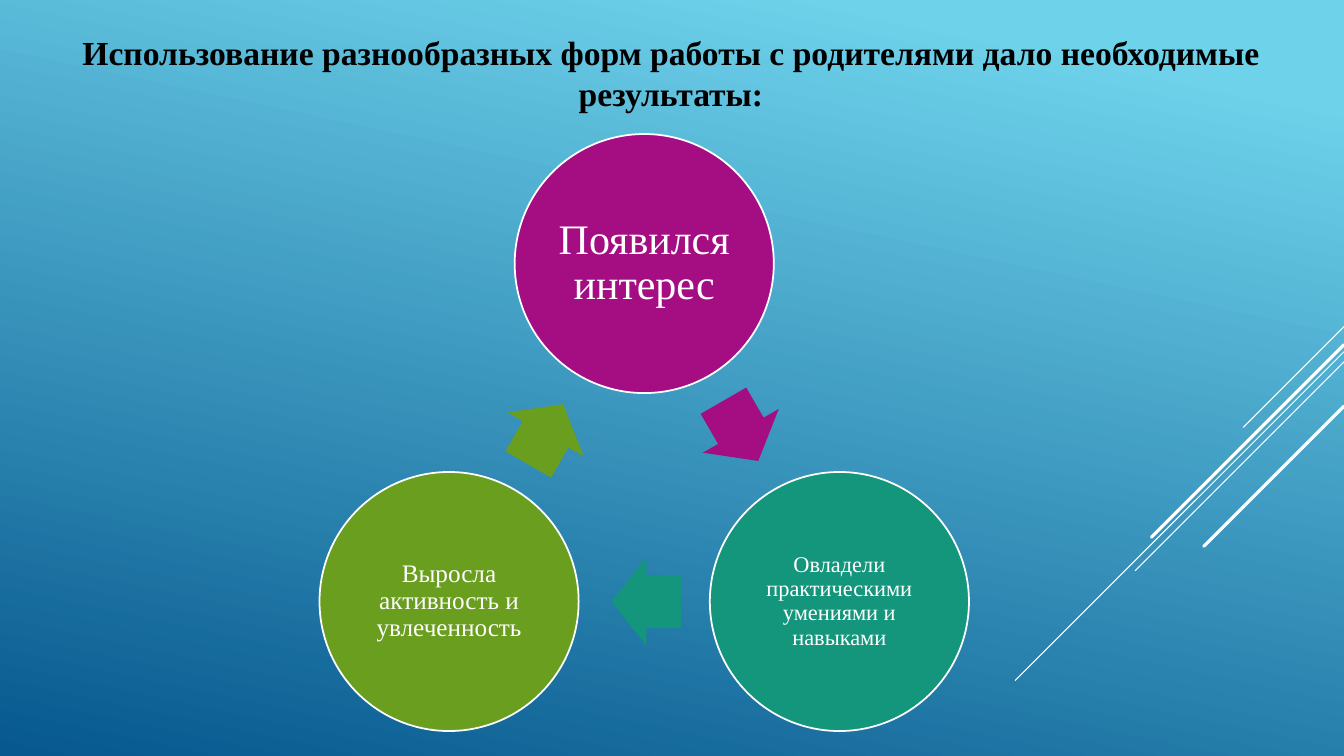
import math

from pptx import Presentation
from pptx.dml.color import RGBColor
from pptx.enum import shapes, text
from pptx.oxml.ns import qn
from pptx.util import Inches, Pt

TITLE = "Использование разнообразных форм работы с родителями дало необходимые результаты:"
FONT = "Times New Roman"
COLORS = {
    "sky": "6ED2EB", "deep": "06588E", "white": "FFFFFF", "black": "000000",
    "purple": "A50E82", "teal": "14967C", "green": "6A9E1F",
}
# label, text size, colour, inset; clockwise from the top
RESULTS = [
    ("Появился интерес", 30, "purple", 0.04),
    ("Овладели практическими умениями и навыками", 16, "teal", 0.02),
    ("Выросла активность и увлеченность", 18, "green", 0.03),
]
# top at the right edge, run of the 45° line, width
STREAKS = [(3.24, 1, 0.75), (3.49, 3.26, 0.75), (3.59, 2.07, 0.75),
           (3.42, 1.91, 2.25), (4.03, 1.39, 2.25)]

SLIDE_W, SLIDE_H = 13.33, 7.5
CENTER_X, CENTER_Y, RING = 6.39, 4.85, 2.235
CIRCLE = 2.57
ARROW_W, ARROW_H, ARROW_BACK = 0.69, 0.87, 0.02


def rgb(name):
    return RGBColor.from_string(COLORS[name])


def style_text(frame, size, color, bold=False):
    frame.word_wrap = True
    para = frame.paragraphs[0]
    para.alignment = text.PP_ALIGN.CENTER
    font = para.runs[0].font
    font.name, font.size, font.bold = FONT, Pt(size), bold
    font.color.rgb = rgb(color)


def add_centered(page, kind, x, y, width, height, color):
    """Add a flat filled shape whose centre is at x, y."""
    shape = page.shapes.add_shape(kind, Inches(x - width / 2), Inches(y - height / 2),
                                  Inches(width), Inches(height))
    shape.shadow.inherit = False
    shape.fill.solid()
    shape.fill.fore_color.rgb = rgb(color)
    return shape


def add_background(page):
    fill = page.background.fill
    fill.gradient()
    fill.gradient_angle = 360 - 102
    for stop, position, color in zip(fill.gradient_stops, (0.1, 1), ("sky", "deep")):
        stop.position = position
        stop.color.rgb = rgb(color)


def add_streaks(page):
    for top, run, width in STREAKS:
        streak = page.shapes.add_connector(
            shapes.MSO_CONNECTOR.STRAIGHT, Inches(SLIDE_W), Inches(top),
            Inches(SLIDE_W - run), Inches(top + run))
        streak.line.color.rgb = rgb("white")
        streak.line.width = Pt(width)
        streak.line._get_or_add_ln().set("cap", "rnd")
        properties = streak._element.spPr
        properties.append(properties.makeelement(qn("a:effectLst"), {}))


def add_title(page):
    title = page.shapes.title
    title.left, title.top = Inches(0.21), Inches(0.27)
    title.width, title.height = Inches(12.89), Inches(0.91)
    title.text_frame.text = TITLE
    title.text_frame.vertical_anchor = text.MSO_ANCHOR.TOP
    style_text(title.text_frame, 24, "black", bold=True)


def add_cycle(page):
    step = 360 / len(RESULTS)
    for index, (label, size, color, inset) in enumerate(RESULTS):
        angle = math.radians(index * step - 90)
        circle = add_centered(page, shapes.MSO_SHAPE.OVAL,
                              CENTER_X + RING * math.cos(angle),
                              CENTER_Y + RING * math.sin(angle), CIRCLE, CIRCLE, color)
        circle.line.color.rgb = rgb("white")
        circle.line.width = Pt(1.25)
        frame = circle.text_frame
        frame.text = label
        frame.margin_left = frame.margin_right = Inches(inset)
        frame.margin_top = frame.margin_bottom = Inches(inset)
        frame.vertical_anchor = text.MSO_ANCHOR.MIDDLE
        frame.paragraphs[0].line_spacing = 0.9
        style_text(frame, size, "white")

        # The arrow sits between this circle and the next, a little nearer this one
        middle = angle + math.radians(step / 2)
        heading = middle + math.pi / 2
        reach = RING * math.cos(math.radians(step / 2))
        arrow = add_centered(
            page, shapes.MSO_SHAPE.RIGHT_ARROW,
            CENTER_X + reach * math.cos(middle) - ARROW_BACK * math.cos(heading),
            CENTER_Y + reach * math.sin(middle) - ARROW_BACK * math.sin(heading),
            ARROW_W, ARROW_H, color)
        arrow.line.fill.background()
        arrow.adjustments[0], arrow.adjustments[1] = 0.6, 0.5
        arrow.rotation = round(math.degrees(heading)) % 360


def main():
    deck = Presentation()
    deck.slide_width, deck.slide_height = Inches(SLIDE_W), Inches(SLIDE_H)
    page = deck.slides.add_slide(deck.slide_layouts[5])
    add_background(page)
    add_streaks(page)
    add_title(page)
    add_cycle(page)
    deck.save("out.pptx")


if __name__ == "__main__":
    main()
